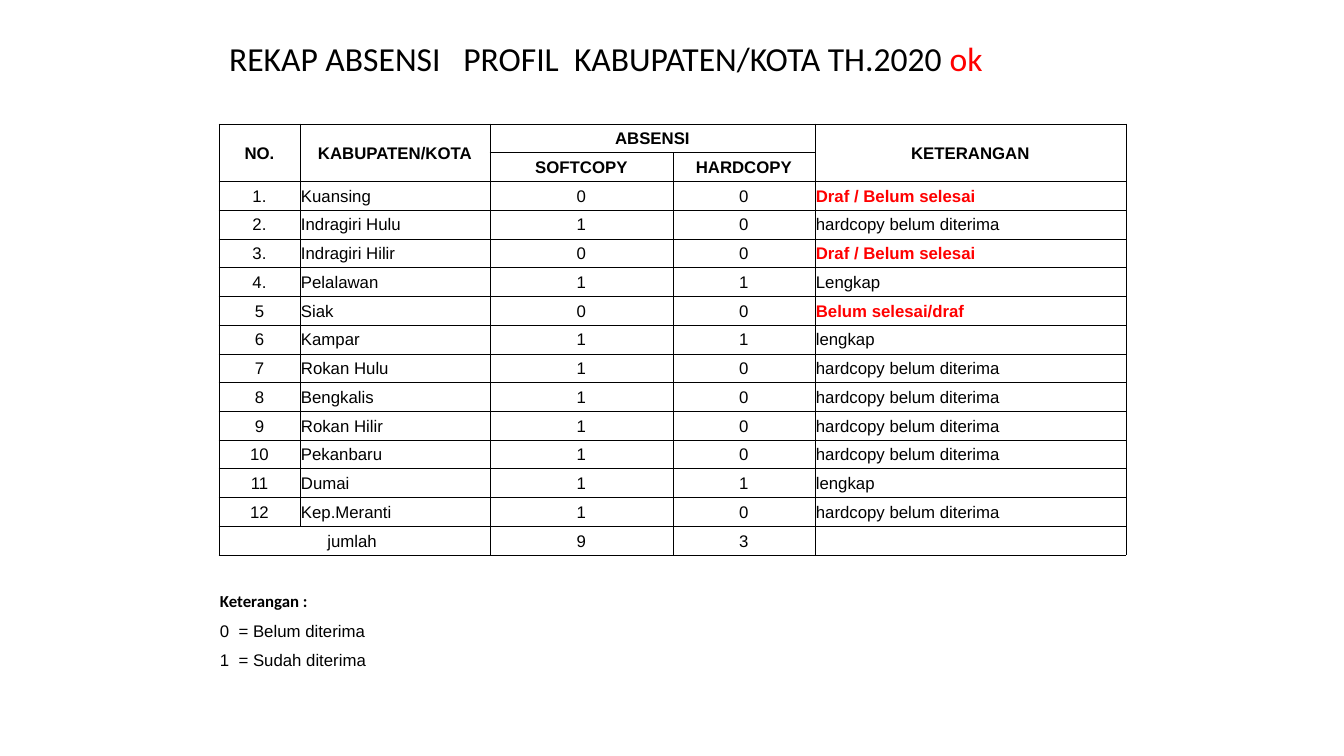
"""Build the attendance recap slide for district profiles in 2020."""
from dataclasses import dataclass

from lxml.etree import SubElement
from pptx import Presentation
from pptx.dml.color import RGBColor
from pptx.enum.text import MSO_ANCHOR, MSO_AUTO_SIZE, PP_ALIGN
from pptx.oxml.ns import qn
from pptx.util import Pt

EMU_PER_PX = 914400 / 100.8
NO_STYLE_NO_GRID = "{2D5ABB26-0587-4C30-8999-92F81FD0307C}"

COLUMN_WIDTHS = [81, 70, 120, 183, 142, 311]
NOT_RECEIVED = "hardcopy belum diterima"
DISTRICTS = [
    ("1.", "Kuansing", 0, 0, "Draf / Belum selesai"),
    ("2.", "Indragiri Hulu", 1, 0, NOT_RECEIVED),
    ("3.", "Indragiri Hilir", 0, 0, "Draf / Belum selesai"),
    ("4.", "Pelalawan", 1, 1, "Lengkap"),
    ("5", "Siak", 0, 0, "Belum selesai/draf"),
    ("6", "Kampar", 1, 1, "lengkap"),
    ("7", "Rokan Hulu", 1, 0, NOT_RECEIVED),
    ("8", "Bengkalis", 1, 0, NOT_RECEIVED),
    ("9", "Rokan Hilir", 1, 0, NOT_RECEIVED),
    ("10", "Pekanbaru", 1, 0, NOT_RECEIVED),
    ("11", "Dumai", 1, 1, "lengkap"),
    ("12", "Kep.Meranti", 1, 0, NOT_RECEIVED),
]
LEGEND = ["Keterangan :", "0  = Belum diterima", "1  = Sudah diterima"]
FIRST_ROW = 2
TOTAL_ROW = FIRST_ROW + len(DISTRICTS)
GAP_ROW = TOTAL_ROW + 1
LEGEND_ROW = GAP_ROW + 1
ROW_COUNT = LEGEND_ROW + len(LEGEND)


@dataclass(frozen=True)
class Theme:
    ink: str = "000000"
    alert: str = "FF0000"
    heading_font: str = "Calibri"
    body_font: str = "Arial"
    title_size: int = 24
    body_size: int = 12
    border_width: float = 0.5


def px(length):
    return round(length * EMU_PER_PX)


class RecapSlide:
    def __init__(self, presentation, theme):
        self.theme = theme
        self.slide = presentation.slides.add_slide(presentation.slide_layouts[5])

    def style_run(self, run, size, font, color, bold=False):
        run.font.size = Pt(size)
        run.font.name = font
        run.font.bold = bold
        run.font.color.rgb = RGBColor.from_string(color)

    def add_title(self, left, top, width, height, parts):
        title = self.slide.shapes.title
        title.left, title.top = px(left), px(top)
        title.width, title.height = px(width), px(height)
        frame = title.text_frame
        frame.word_wrap = True
        frame.auto_size = MSO_AUTO_SIZE.NONE
        frame.vertical_anchor = MSO_ANCHOR.MIDDLE
        paragraph = frame.paragraphs[0]
        paragraph.alignment = PP_ALIGN.LEFT
        paragraph.line_spacing = 0.9
        for text, color in parts:
            run = paragraph.add_run()
            run.text = text
            self.style_run(run, self.theme.title_size, self.theme.heading_font, color)

    def add_table(self, left, top, height, widths, row_count, bordered_rows):
        frame = self.slide.shapes.add_table(
            row_count, len(widths), px(left), px(top), px(sum(widths)), px(height))
        table = frame.table
        table.first_row = table.horz_banding = False
        table._tbl.tblPr.find(qn("a:tableStyleId")).text = NO_STYLE_NO_GRID
        for column, width in zip(table.columns, widths):
            column.width = px(width)
        for index, row in enumerate(table.rows):
            row.height = px(height / row_count)
            for cell in row.cells:
                self.prepare_cell(cell, index < bordered_rows)
        return table

    def prepare_cell(self, cell, bordered):
        cell.margin_left = cell.margin_right = cell.margin_top = px(1)
        cell.margin_bottom = 0
        if bordered:
            self.add_borders(cell)
        cell.fill.background()
        paragraph = cell.text_frame.paragraphs[0]
        SubElement(paragraph._p, qn("a:endParaRPr"), sz=str(self.theme.body_size * 100))

    def add_borders(self, cell):
        properties = cell._tc.get_or_add_tcPr()
        for side in ("L", "R", "T", "B"):
            line = SubElement(properties, qn(f"a:ln{side}"), w=str(Pt(self.theme.border_width)))
            fill = SubElement(line, qn("a:solidFill"))
            SubElement(fill, qn("a:srgbClr"), val=self.theme.ink)

    def write_cell(self, cell, text, alignment=PP_ALIGN.CENTER, anchor=MSO_ANCHOR.MIDDLE,
                   color=None, font=None, bold=False):
        cell.vertical_anchor = anchor
        paragraph = cell.text_frame.paragraphs[0]
        paragraph.text = str(text)
        paragraph.alignment = alignment
        self.style_run(paragraph.runs[0], self.theme.body_size,
                       font or self.theme.body_font, color or self.theme.ink, bold)


def fill_header(recap, table):
    for first, last in (((0, 0), (1, 0)), ((0, 1), (1, 2)),
                        ((0, 3), (0, 4)), ((0, 5), (1, 5))):
        table.cell(*first).merge(table.cell(*last))
    headings = {(0, 0): "NO.", (0, 1): "KABUPATEN/KOTA", (0, 3): "ABSENSI",
                (0, 5): "KETERANGAN", (1, 3): "SOFTCOPY", (1, 4): "HARDCOPY"}
    for position, heading in headings.items():
        recap.write_cell(table.cell(*position), heading, bold=True)


def fill_districts(recap, table):
    for row, (number, name, softcopy, hardcopy, note) in enumerate(DISTRICTS, FIRST_ROW):
        table.cell(row, 1).merge(table.cell(row, 2))
        for column, value in ((0, number), (3, softcopy), (4, hardcopy)):
            recap.write_cell(table.cell(row, column), value)
        recap.write_cell(table.cell(row, 1), name, PP_ALIGN.JUSTIFY)
        unfinished = softcopy == 0
        recap.write_cell(table.cell(row, 5), note, PP_ALIGN.JUSTIFY, bold=unfinished,
                         color=recap.theme.alert if unfinished else None)


def fill_totals(recap, table):
    table.cell(TOTAL_ROW, 0).merge(table.cell(TOTAL_ROW, 2))
    recap.write_cell(table.cell(TOTAL_ROW, 0), "jumlah ")
    recap.write_cell(table.cell(TOTAL_ROW, 3), sum(district[2] for district in DISTRICTS))
    recap.write_cell(table.cell(TOTAL_ROW, 4), sum(district[3] for district in DISTRICTS))


def fill_legend(recap, table):
    table.cell(GAP_ROW, 0).merge(table.cell(GAP_ROW, 1))
    for row, text in enumerate(LEGEND, LEGEND_ROW):
        table.cell(row, 0).merge(table.cell(row, 2))
        heading = row == LEGEND_ROW
        recap.write_cell(table.cell(row, 0), text, PP_ALIGN.LEFT, MSO_ANCHOR.BOTTOM,
                         font=recap.theme.heading_font if heading else None, bold=heading)


def main():
    presentation = Presentation()
    presentation.slide_width, presentation.slide_height = px(1344), px(756)
    theme = Theme()
    recap = RecapSlide(presentation, theme)
    recap.add_title(219, 30, 907, 61, [
        ("REKAP ABSENSI   PROFIL  KABUPATEN/KOTA TH.2020 ", theme.ink),
        ("ok", theme.alert),
    ])
    table = recap.add_table(219, 124, 546, COLUMN_WIDTHS, ROW_COUNT, GAP_ROW)
    for fill_part in (fill_header, fill_districts, fill_totals, fill_legend):
        fill_part(recap, table)
    presentation.save("out.pptx")


if __name__ == "__main__":
    main()
